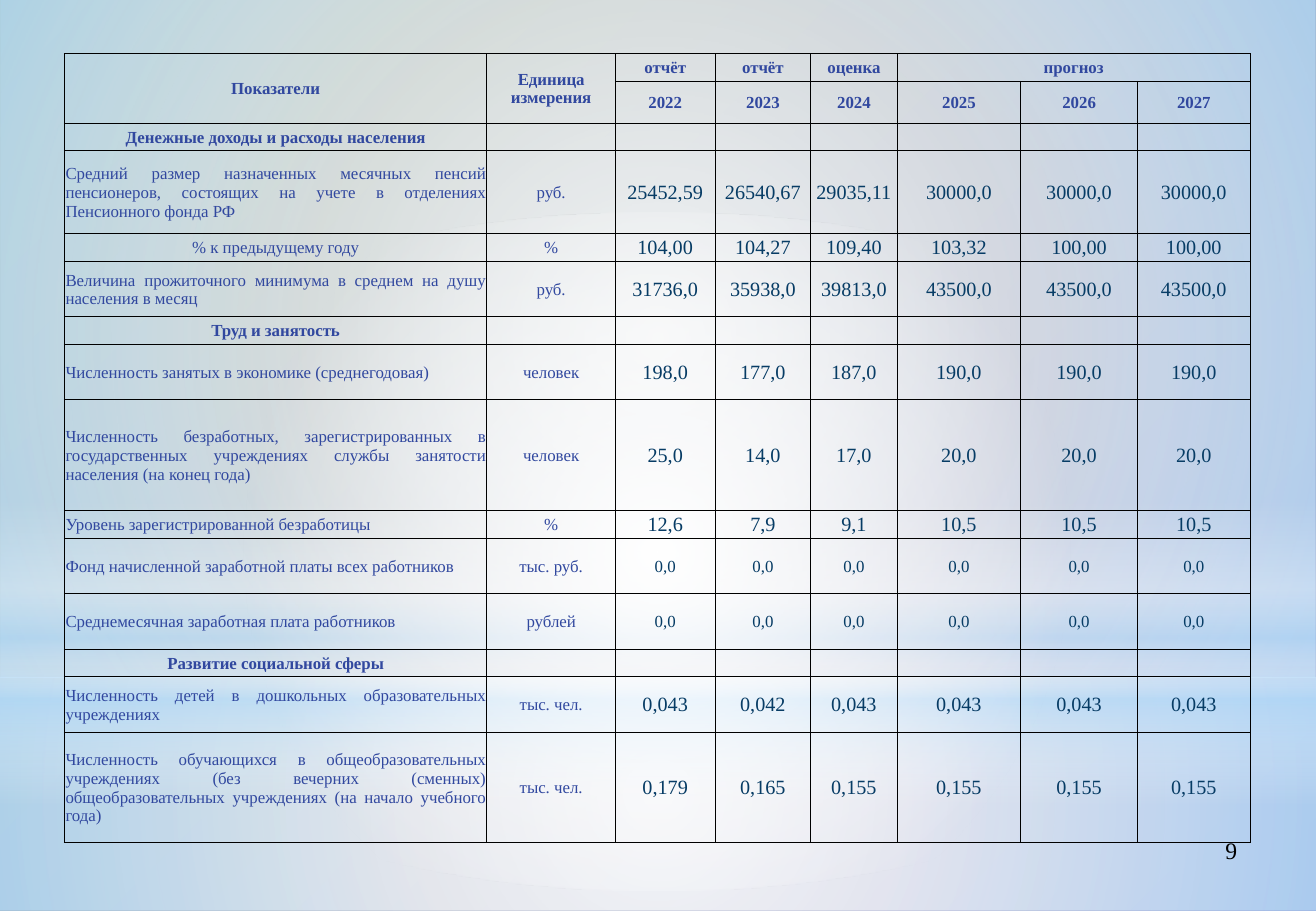
from pptx import Presentation
from pptx.dml.color import RGBColor
from pptx.enum.shapes import MSO_SHAPE
from pptx.enum.text import MSO_ANCHOR, PP_ALIGN
from pptx.oxml import parse_xml
from pptx.oxml.ns import nsdecls, qn
from pptx.util import Inches, Pt

WIDTH, HEIGHT = Inches(10.84), Inches(7.5)
ROW_UNIT = Inches(0.228)
COLUMN_WIDTHS = (3.48, 1.06, 0.82, 0.79, 0.71, 1.02, 0.96, 0.93)
ROW_UNITS = (1, 1.4, 1, 3, 1, 2, 1, 2, 4, 1, 2, 2, 1, 2, 4)
FONT = "Times New Roman"
BLACK = RGBColor(0x00, 0x00, 0x00)
WHITE = RGBColor(0xFF, 0xFF, 0xFF)
SKY = RGBColor(0xB4, 0xDC, 0xFA)
SAGE = RGBColor(0x96, 0xAB, 0x94)
VIOLET = RGBColor(0x84, 0x88, 0xC4)
LABEL_BLUE = RGBColor(0x31, 0x48, 0x9F)
VALUE_BLUE = RGBColor(0x07, 0x3C, 0x65)

PERIODS = ("отчёт", "отчёт", "оценка", "прогноз")
YEARS = range(2022, 2028)
INDICATORS = (
    ("Денежные доходы и расходы населения", "", ""),
    ("Средний размер назначенных месячных пенсий пенсионеров, состоящих на учете "
     "в отделениях Пенсионного фонда РФ",
     "руб.", "25452,59 26540,67 29035,11 30000,0 30000,0 30000,0"),
    ("% к предыдущему году", "%", "104,00 104,27 109,40 103,32 100,00 100,00"),
    ("Величина прожиточного минимума в среднем на душу населения в месяц",
     "руб.", "31736,0 35938,0 39813,0 43500,0 43500,0 43500,0"),
    ("Труд и занятость", "", ""),
    ("Численность занятых в экономике (среднегодовая)",
     "человек", "198,0 177,0 187,0 190,0 190,0 190,0"),
    ("Численность безработных, зарегистрированных в государственных учреждениях "
     "службы занятости населения (на конец года)",
     "человек", "25,0 14,0 17,0 20,0 20,0 20,0"),
    ("Уровень зарегистрированной безработицы", "%", "12,6 7,9 9,1 10,5 10,5 10,5"),
    ("Фонд начисленной заработной платы всех работников",
     "тыс. руб.", "0,0 0,0 0,0 0,0 0,0 0,0"),
    ("Среднемесячная заработная плата работников",
     "рублей", "0,0 0,0 0,0 0,0 0,0 0,0"),
    ("Развитие социальной сферы", "", ""),
    ("Численность детей в дошкольных образовательных учреждениях",
     "тыс. чел.", "0,043 0,042 0,043 0,043 0,043 0,043"),
    ("Численность обучающихся в общеобразовательных учреждениях (без вечерних "
     "(сменных) общеобразовательных учреждениях (на начало учебного года)",
     "тыс. чел.", "0,179 0,165 0,155 0,155 0,155 0,155"),
)


def write(frame, text, size=10, color=LABEL_BLUE, bold=False, align=PP_ALIGN.CENTER):
    """Put one formatted paragraph into a text frame."""
    frame.word_wrap = True
    paragraph = frame.paragraphs[0]
    paragraph.alignment = align
    if not text:
        paragraph._p.get_or_add_endParaRPr().set("sz", str(size * 100))
        return
    run = paragraph.add_run()
    run.text = text
    run.font.name = FONT
    run.font.size = Pt(size)
    run.font.bold = bold
    run.font.color.rgb = color


def add_glow(slide, outline, top, height, stops, radial=True):
    """Add a full-width shape with a translucent gradient of (place, colour, opacity) stops."""
    glow = slide.shapes.add_shape(
        outline, 0, round(HEIGHT * top), WIDTH, round(HEIGHT * height))
    glow.shadow.inherit = False
    glow.line.fill.background()
    glow.fill.background()
    stop_list = "".join(
        f'<a:gs pos="{place * 1000}"><a:srgbClr val="{color}">'
        f'<a:alpha val="{opacity * 1000}"/></a:srgbClr></a:gs>'
        for place, color, opacity in stops)
    center = '<a:fillToRect l="50000" t="50000" r="50000" b="50000"/>'
    direction = (f'<a:path path="circle">{center}</a:path>' if radial
                 else '<a:lin ang="5400000" scaled="0"/>')
    gradient = parse_xml(
        f'<a:gradFill {nsdecls("a")} rotWithShape="1">'
        f'<a:gsLst>{stop_list}</a:gsLst>{direction}</a:gradFill>')
    properties = glow._element.spPr
    properties.replace(properties.find(qn("a:noFill")), gradient)


def add_backdrop(slide):
    """Paint the diagonal background and the soft light over it."""
    fill = slide.background.fill
    fill.gradient()
    fill.gradient_angle = 315
    for stop, color in zip(fill.gradient_stops, (SAGE, VIOLET)):
        stop.color.rgb = color
    add_glow(slide, MSO_SHAPE.RECTANGLE, 0.744, 0.256,
             ((0, WHITE, 91), (37, WHITE, 76), (100, SKY, 79)))
    add_glow(slide, MSO_SHAPE.RECTANGLE, 0, 0.744,
             ((0, WHITE, 89), (48, WHITE, 62), (100, SKY, 79)))
    add_glow(slide, MSO_SHAPE.RECTANGLE, 0.55, 0.333,
             ((0, WHITE, 0), (29, WHITE, 30), (45, SKY, 40), (55, WHITE, 26),
              (65, SKY, 60), (100, WHITE, 0)), radial=False)
    add_glow(slide, MSO_SHAPE.OVAL, 0.233, 0.744, ((0, WHITE, 100), (56, WHITE, 0)))


def format_cell(cell):
    """Give a cell thin black borders, narrow margins and no fill."""
    properties = cell._tc.get_or_add_tcPr()
    for side in "LRTB":
        properties.append(parse_xml(
            f'<a:ln{side} {nsdecls("a")} w="{Pt(0.5)}"><a:solidFill>'
            f'<a:srgbClr val="{BLACK}"/></a:solidFill></a:ln{side}>'))
    cell.fill.background()
    cell.vertical_anchor = MSO_ANCHOR.MIDDLE
    cell.margin_left = cell.margin_right = cell.margin_top = Inches(0.01)
    cell.margin_bottom = 0


def fill_header(table):
    """Write the two header rows and merge their wide cells."""
    table.cell(0, 0).merge(table.cell(1, 0))
    table.cell(0, 1).merge(table.cell(1, 1))
    table.cell(0, 5).merge(table.cell(0, 7))
    for column, title in enumerate(("Показатели", "Единица измерения") + PERIODS):
        write(table.cell(0, column).text_frame, title, bold=True)
    for column, year in enumerate(YEARS, 2):
        write(table.cell(1, column).text_frame, str(year), bold=True)


def fill_indicator(table, row, label, unit, values):
    """Write one section heading or one indicator with its yearly values."""
    centered = not unit or label.startswith("%")
    write(table.cell(row, 0).text_frame, label, bold=not unit,
          align=PP_ALIGN.CENTER if centered else PP_ALIGN.JUSTIFY)
    write(table.cell(row, 1).text_frame, unit)
    yearly = values.split() or [""] * len(YEARS)
    for column, value in enumerate(yearly, 2):
        write(table.cell(row, column).text_frame, value, color=VALUE_BLUE,
              size=10 if value in ("", "0,0") else 12)


def add_indicators(slide):
    """Add the table of social indicators."""
    table = slide.shapes.add_table(
        len(ROW_UNITS), len(COLUMN_WIDTHS), Inches(0.53), Inches(0.44),
        Inches(sum(COLUMN_WIDTHS)), round(ROW_UNIT * sum(ROW_UNITS))).table
    table.first_row = table.horz_banding = False
    for column, width in zip(table.columns, COLUMN_WIDTHS):
        column.width = Inches(width)
    for row, units in zip(table.rows, ROW_UNITS):
        row.height = round(ROW_UNIT * units)
    for cell in table.iter_cells():
        format_cell(cell)
    fill_header(table)
    for row, indicator in enumerate(INDICATORS, 2):
        fill_indicator(table, row, *indicator)


def add_page_number(slide):
    """Add the page number under the table's right edge."""
    page_number = slide.shapes.add_textbox(
        Inches(7.76), Inches(6.83), Inches(2.53), Inches(0.52))
    write(page_number.text_frame, "9", size=14, color=BLACK, align=PP_ALIGN.RIGHT)


def main():
    """Build the slide and save it."""
    presentation = Presentation()
    presentation.slide_width, presentation.slide_height = WIDTH, HEIGHT
    slide = presentation.slides.add_slide(presentation.slide_layouts[6])
    add_backdrop(slide)
    add_page_number(slide)
    add_indicators(slide)
    presentation.save("out.pptx")


if __name__ == "__main__":
    main()
